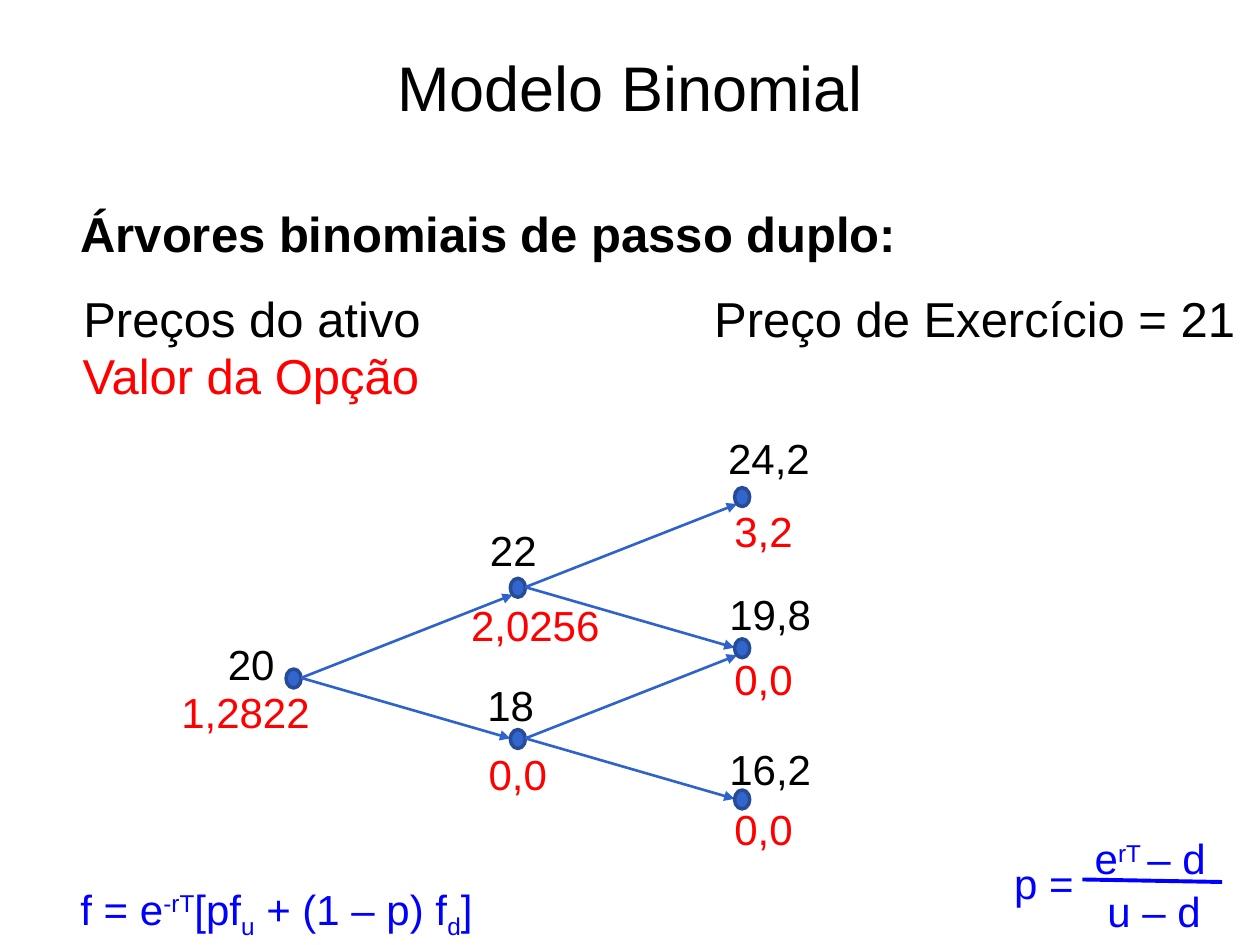
"""Builds the slide with the two-step binomial tree."""
from dataclasses import dataclass

from lxml import etree
from pptx import Presentation
from pptx.dml.color import RGBColor
from pptx.enum.shapes import MSO_CONNECTOR, MSO_SHAPE
from pptx.enum.text import MSO_ANCHOR, PP_ALIGN
from pptx.oxml.ns import qn
from pptx.util import Emu, Pt

PX = 9144
LEFT, CENTER = PP_ALIGN.LEFT, PP_ALIGN.CENTER
TOP, MIDDLE = MSO_ANCHOR.TOP, MSO_ANCHOR.MIDDLE
STRAIGHT, OVAL = MSO_CONNECTOR.STRAIGHT, MSO_SHAPE.OVAL
SUPERSCRIPT, NORMAL, SUBSCRIPT = 30, 0, -25


@dataclass(frozen=True)
class Theme:
    """Holds the font, colours and type sizes."""
    font: str = "Arial"
    black: str = "000000"
    red: str = "FF0000"
    blue: str = "0000FF"
    node: str = "3366CC"
    outline: str = "264B97"
    arrow: str = "2E63CB"
    title: int = 36
    heading: int = 28
    label: int = 24


THEME = Theme()
NODE_WIDTH, NODE_HEIGHT = 12, 15
ROOT_X, ROOT_Y = 227, 531
STEP_X, UP_Y, DOWN_Y = 178, -72, 48
STEPS = 2

NODE_LABELS = [
    ("20", 171, 502, "1,2822", 134, 540),
    ("22", 379, 411, "2,0256", 364, 471),
    ("18", 377, 534, "0,0", 378, 589),
    ("24,2", 568, 338, "3,2", 573, 396),
    ("19,8", 569, 462, "0,0", 573, 514),
    ("16,2", 569, 585, "0,0", 573, 633),
]


class SlideBuilder:
    """Draws each kind of element on the current slide."""

    def __init__(self, slide, theme):
        self.slide = slide
        self.theme = theme

    def text(self, box, runs, size, color, align=LEFT, anchor=TOP,
             bold=False, spacing=1.0, wrap=True):
        """Adds a text box from pairs of wording and baseline shift."""
        shape = self.slide.shapes.add_textbox(*(Emu(n * PX) for n in box))
        frame = shape.text_frame
        frame.word_wrap = wrap
        frame.vertical_anchor = anchor
        paragraph = frame.paragraphs[0]
        paragraph.alignment = align
        paragraph.line_spacing = spacing
        for wording, baseline in runs:
            run = paragraph.add_run()
            run.text = wording
            run.font.name = self.theme.font
            run.font.size = Pt(size)
            run.font.bold = bold
            run.font.color.rgb = RGBColor.from_string(color)
            if baseline:
                run.font._element.set("baseline", str(baseline * 1000))

    def label(self, x, y, wording, color, width):
        """Adds a value beside a node."""
        self.text((x, y, width, 50), [(wording, NORMAL)], self.theme.label, color)

    def formula(self, box, runs, wrap=True):
        """Adds a part of a formula."""
        self.text(box, runs, self.theme.label, self.theme.blue,
                  spacing=1.2, wrap=wrap)

    def node(self, x, y):
        """Adds a node of the tree."""
        box = (x, y, NODE_WIDTH, NODE_HEIGHT)
        shape = self.slide.shapes.add_shape(OVAL, *(Emu(n * PX) for n in box))
        shape.shadow.inherit = False
        shape.fill.solid()
        shape.fill.fore_color.rgb = RGBColor.from_string(self.theme.node)
        shape.line.color.rgb = RGBColor.from_string(self.theme.outline)
        shape.line.width = Pt(2)

    def line(self, start, end, color, width, arrow=False):
        """Adds a straight line, with an arrowhead on request."""
        points = (Emu(n * PX) for n in (*start, *end))
        connector = self.slide.shapes.add_connector(STRAIGHT, *points)
        connector.line.color.rgb = RGBColor.from_string(color)
        connector.line.width = Pt(width)
        if arrow:
            outline = connector.line._get_or_add_ln()
            etree.SubElement(outline, qn("a:tailEnd"), type="triangle")
        etree.SubElement(connector._element.spPr, qn("a:effectLst"))


def node_position(step, downs):
    """Returns the top left corner of a node."""
    ups = step - downs
    return ROOT_X + step * STEP_X, ROOT_Y + ups * UP_Y + downs * DOWN_Y


def draw_tree(builder):
    """Draws the nodes, their arrows and their values."""
    theme = builder.theme
    positions = [(step, downs) for step in range(STEPS + 1)
                 for downs in range(step + 1)]
    for (step, downs), labels in zip(positions, NODE_LABELS):
        x, y = node_position(step, downs)
        builder.node(x, y)
        if step < STEPS:
            start = (x + NODE_WIDTH, y + NODE_HEIGHT // 2)
            up_x, up_y = node_position(step + 1, downs)
            down_x, down_y = node_position(step + 1, downs + 1)
            for end in ((up_x + 2, up_y + 13),
                        (down_x, down_y + NODE_HEIGHT // 2)):
                builder.line(start, end, theme.arrow, 1.5, arrow=True)
        price, price_x, price_y, option, option_x, option_y = labels
        builder.label(price_x, price_y, price, theme.black, 112)
        builder.label(option_x, option_y, option, theme.red, 129)


def main():
    """Builds and saves the presentation."""
    presentation = Presentation()
    presentation.slide_width = Emu(1000 * PX)
    presentation.slide_height = Emu(750 * PX)
    slide = presentation.slides.add_slide(presentation.slide_layouts[6])
    theme = THEME
    builder = SlideBuilder(slide, theme)

    builder.text((50, 30, 900, 77), [("Modelo Binomial", NORMAL)],
                 theme.title, theme.black, CENTER, MIDDLE)
    builder.text((54, 138, 721, 83), [("Árvores binomiais de passo duplo:", NORMAL)],
                 theme.heading, theme.black, bold=True, spacing=1.4)
    for box, wording, color in (
        ((20, 224, 360, 57), "Preços do ativo", theme.black),
        ((553, 224, 441, 57), "Preço de Exercício = 21", theme.black),
        ((19, 269, 360, 57), "Valor da Opção", theme.red),
    ):
        builder.text(box, [(wording, NORMAL)], theme.heading, color, CENTER)

    draw_tree(builder)

    builder.formula((54, 687, 409, 56), [
        ("f = e", NORMAL), ("-rT", SUPERSCRIPT), ("[pf", NORMAL),
        ("u", SUBSCRIPT), (" + (1 – p) f", NORMAL), ("d", SUBSCRIPT),
        ("]", NORMAL)])
    builder.formula((795, 668, 78, 53), [("p =", NORMAL)])
    builder.formula((859, 648, 116, 59), [
        ("e", NORMAL), ("rT ", SUPERSCRIPT), ("– d", NORMAL)], wrap=False)
    builder.formula((869, 690, 95, 59), [("u – d", NORMAL)], wrap=False)
    builder.line((859, 698), (970, 700), theme.blue, 2.25)
    presentation.save("out.pptx")


if __name__ == "__main__":
    main()
